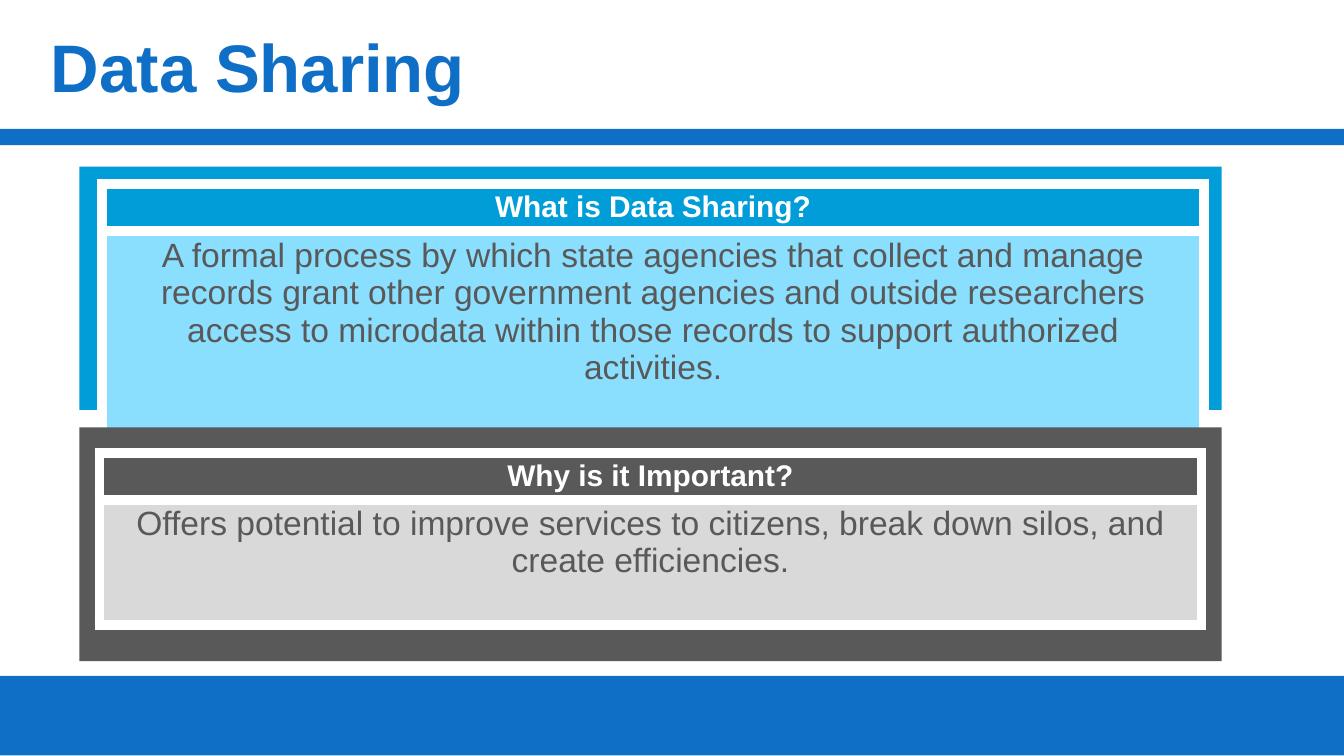
import pptx
import pptx.dml.color
import pptx.enum.shapes
import pptx.enum.text
import pptx.oxml
import pptx.oxml.ns
import pptx.util
from pptx.util import Inches

BLUE, CYAN, PALE_CYAN = "0F6FC6", "009DD9", "8ADFFF"
GREY, PALE_GREY, WHITE = "595959", "D9D9D9", "FFFFFF"
CENTER = pptx.enum.text.PP_ALIGN.CENTER
MIDDLE = pptx.enum.text.MSO_ANCHOR.MIDDLE


def color(value):
    return pptx.dml.color.RGBColor.from_string(value)


def add_block(page, box, fill):
    left, top, width, height = box
    block = page.shapes.add_shape(
        pptx.enum.shapes.MSO_SHAPE.RECTANGLE,
        Inches(left), Inches(top), Inches(width), Inches(height))
    block.shadow.inherit = False
    block.fill.solid()
    block.fill.fore_color.rgb = color(fill)
    block.line.fill.background()


def write(frame, text, size, ink, bold=False, align=None):
    para = frame.paragraphs[0]
    para.text = text
    para.alignment = align
    para.font.name = "Arial"
    para.font.size = pptx.util.Pt(size)
    para.font.bold = bold
    para.font.color.rgb = color(ink)


def set_borders(cell, visible):
    """Draw 6 pt white lines on the visible sides (L, R, T, B), none elsewhere."""
    properties = cell._tc.get_or_add_tcPr()
    for index, side in enumerate("LRTB"):
        paint = (f'<a:solidFill><a:srgbClr val="{WHITE}"/></a:solidFill>'
                 if side in visible else "<a:noFill/>")
        line = pptx.oxml.parse_xml(
            f'<a:ln{side} {pptx.oxml.ns.nsdecls("a")} w="{pptx.util.Pt(6)}">'
            f"{paint}</a:ln{side}>")
        properties.insert(index, line)


def add_title(page, box, text):
    left, top, width, height = box
    title = page.shapes.add_textbox(
        Inches(left), Inches(top), Inches(width), Inches(height))
    frame = title.text_frame
    frame.word_wrap = True
    frame.vertical_anchor = MIDDLE
    write(frame, text, 36, BLUE, bold=True)


def add_panel(page, box, inset, heights, heading, body, dark, pale):
    """Place a dark block with a heading-and-body table inset in it."""
    add_block(page, box, dark)
    left, top = box[0] + inset[0], box[1] + inset[1]
    table = page.shapes.add_table(
        len(heights), 1, Inches(left), Inches(top),
        Inches(8.2), Inches(sum(heights))).table
    table.horz_banding = False
    fills = (dark, pale, pale)
    borders = ("LRTB", "LRT", "LRB")
    for index, height in enumerate(heights):
        table.rows[index].height = Inches(height)
        cell = table.cell(index, 0)
        cell.fill.solid()
        cell.fill.fore_color.rgb = color(fills[index])
        cell.vertical_anchor = MIDDLE
        cell.margin_top = cell.margin_bottom = 0
        set_borders(cell, borders[index])
    write(table.cell(0, 0).text_frame, heading, 16, WHITE, True, CENTER)
    write(table.cell(1, 0).text_frame, body, 18, GREY, False, CENTER)


def main():
    deck = pptx.Presentation()
    deck.slide_width, deck.slide_height = Inches(10), Inches(10 * 9 / 16)
    page = deck.slides.add_slide(deck.slide_layouts[6])

    add_block(page, (0, 5.03, 10, 0.59), BLUE)
    add_block(page, (0, 0.96, 10, 0.12), BLUE)
    add_title(page, (0.28, 0, 9.72, 0.97), "Data Sharing")
    add_panel(
        page, (0.59, 1.24, 8.5, 1.81), (0.17, 0.13), (0.35, 1.15, 0.43),
        "What is Data Sharing?",
        "A formal process by which state agencies that collect and manage "
        "records grant other government agencies and outside researchers "
        "access to microdata within those records to support authorized "
        "activities.",
        CYAN, PALE_CYAN)
    add_panel(
        page, (0.59, 3.18, 8.5, 1.74), (0.15, 0.19), (0.35, 0.63, 0.28),
        "Why is it Important?",
        "Offers potential to improve services to citizens, break down silos, "
        "and create efficiencies.",
        GREY, PALE_GREY)
    deck.save("out.pptx")


if __name__ == "__main__":
    main()
